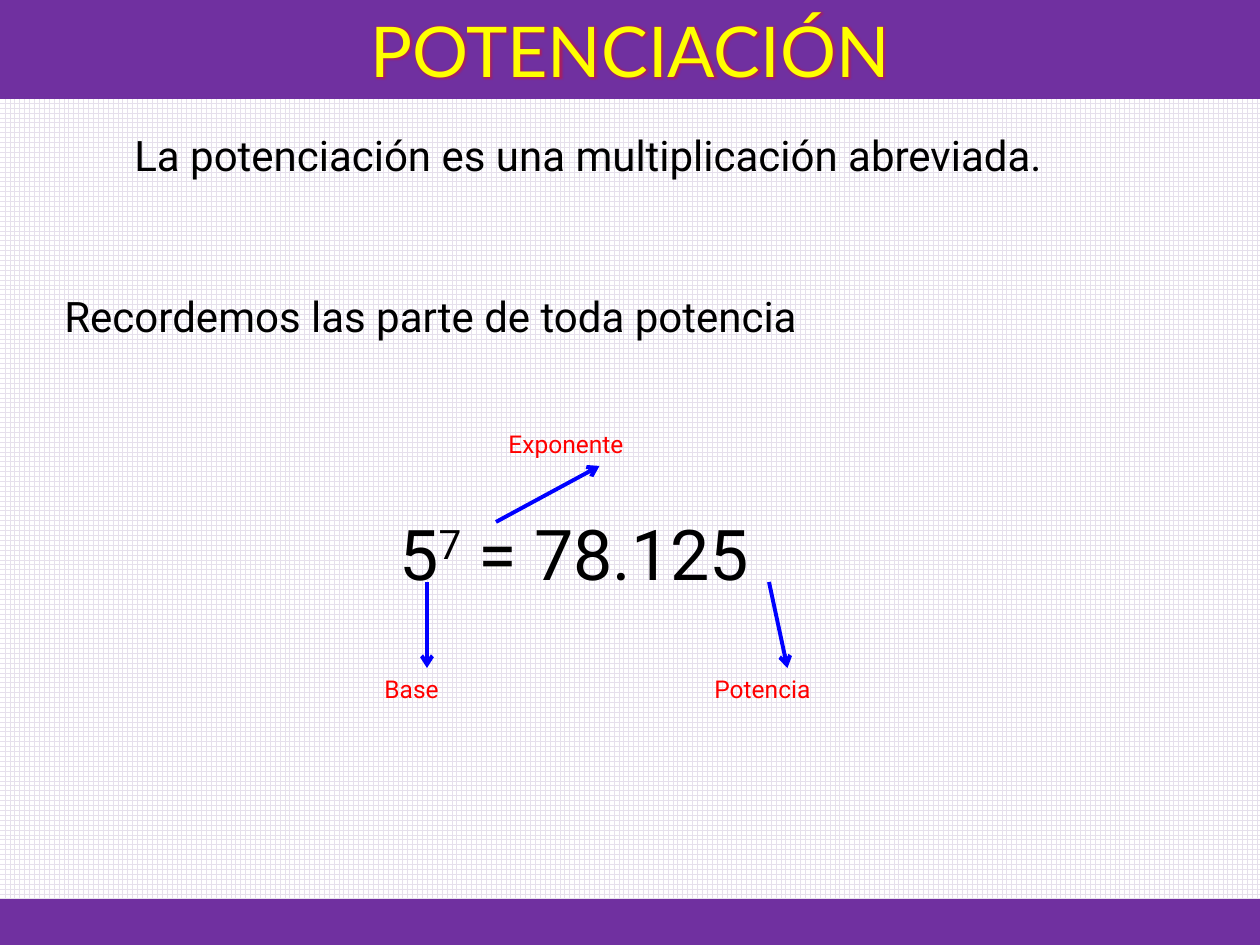
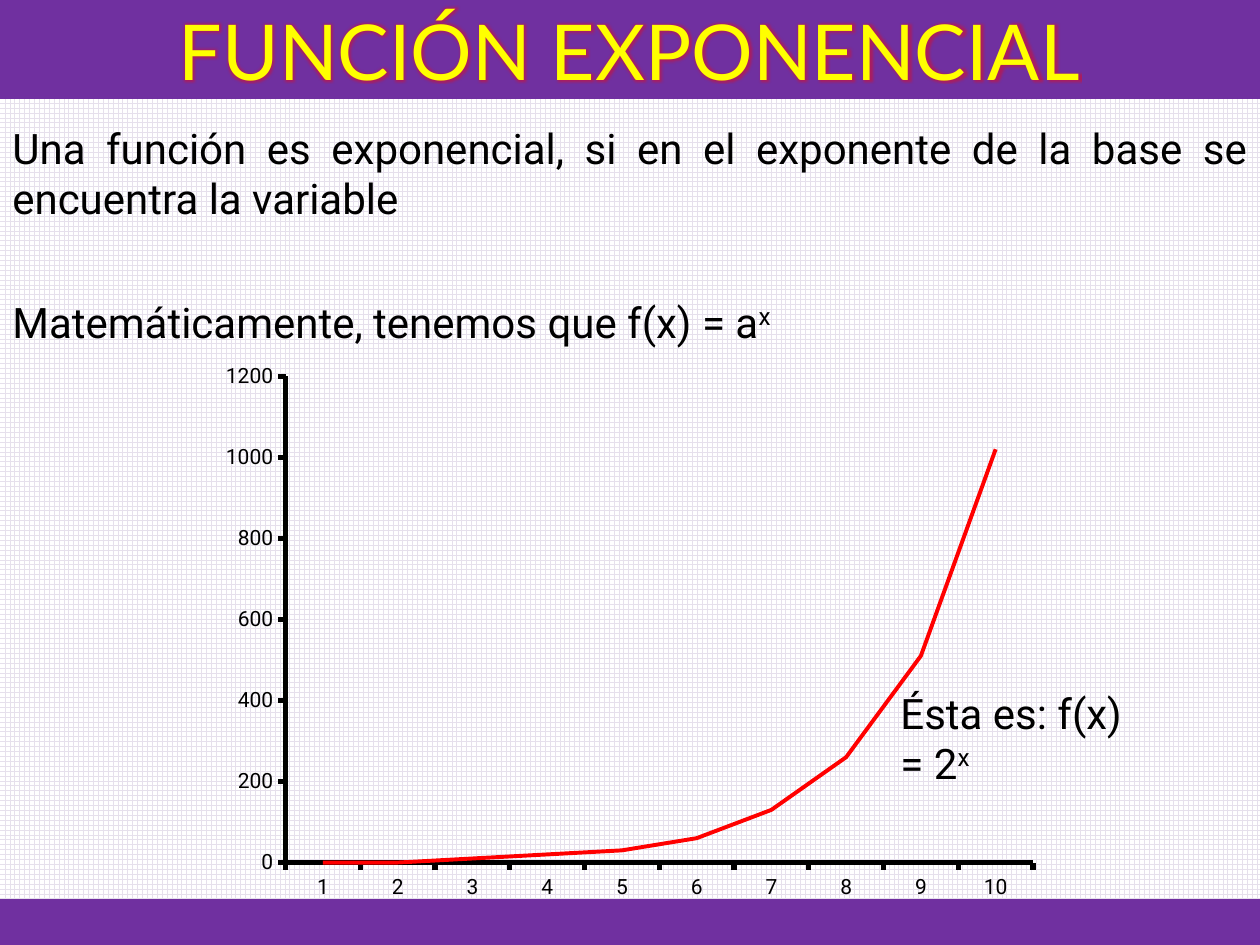
from dataclasses import dataclass
from lxml.etree import SubElement
from pptx import Presentation
from pptx.chart.data import CategoryChartData
from pptx.dml.color import RGBColor
from pptx.enum.chart import XL_CHART_TYPE, XL_TICK_MARK
from pptx.enum.dml import MSO_PATTERN
from pptx.enum.shapes import MSO_CONNECTOR, MSO_SHAPE
from pptx.enum.text import MSO_ANCHOR, MSO_AUTO_SIZE, PP_ALIGN
from pptx.oxml import parse_xml
from pptx.oxml.ns import nsdecls, qn
from pptx.util import Emu, Pt

SCALE = 914400 / 126
WIDE, HIGH = 1260, 945


@dataclass(frozen=True)
class Theme:
    band: str = "7030A0"
    title: str = "FFFF00"
    edge: str = "F79646"
    glow: str = "FF0000"
    grid: str = "E6E0EC"
    paper: str = "FFFFFF"
    ink: str = "000000"
    label: str = "FF0000"
    arrow: str = "0000FF"
    curve: str = "FF0000"
    head: str = "Lato"
    body: str = "Roboto"
    text: int = 24
    power: int = 40
    note: int = 14
    tick: int = 12
    line: float = 2.25
    axis: int = 3


T = Theme()


def px(n):
    return Emu(round(n * SCALE))


def place(*box):
    return [px(n) for n in box]


def tint(code):
    return RGBColor.from_string(code)


def style(font, size, color=T.ink, face=T.body):
    font.size = Pt(size)
    font.name = face
    font.color.rgb = tint(color)


def write(slide, box, runs, size=T.text, color=T.ink, align=PP_ALIGN.LEFT):
    shape = slide.shapes.add_textbox(*place(*box))
    frame = shape.text_frame
    frame.word_wrap = True
    frame.auto_size = MSO_AUTO_SIZE.SHAPE_TO_FIT_TEXT
    para = frame.paragraphs[0]
    para.alignment = align
    for text, raised in runs:
        run = para.add_run()
        run.text = text
        style(run.font, size, color)
        if raised:
            run.font._element.set("baseline", "30000")
    return shape


def add_band(slide, box):
    band = slide.shapes.add_shape(MSO_SHAPE.RECTANGLE, *place(*box))
    band.shadow.inherit = False
    band.fill.solid()
    band.fill.fore_color.rgb = tint(T.band)
    band.line.fill.background()
    return band


def add_title(slide, box, text, size):
    frame = add_band(slide, box).text_frame
    frame.word_wrap = True
    frame.vertical_anchor = MSO_ANCHOR.MIDDLE
    para = frame.paragraphs[0]
    para.alignment = PP_ALIGN.CENTER
    run = para.add_run()
    run.text = text
    style(run.font, size, T.title, T.head)
    props = run.font._element
    props.insert(0, parse_xml(
        f'<a:ln {nsdecls("a")} w="9525"><a:solidFill>'
        f'<a:srgbClr val="{T.edge}"/></a:solidFill></a:ln>'))
    props.insert(2, parse_xml(
        f'<a:effectLst {nsdecls("a")}><a:glow rad="50800">'
        f'<a:srgbClr val="{T.glow}"><a:alpha val="40000"/></a:srgbClr>'
        '</a:glow></a:effectLst>'))


def add_page(deck, title, size):
    slide = deck.slides.add_slide(deck.slide_layouts[6])
    fill = slide.background.fill
    fill.patterned()
    fill.pattern = MSO_PATTERN.LARGE_GRID
    fill.fore_color.rgb = tint(T.grid)
    fill.back_color.rgb = tint(T.paper)
    add_title(slide, (0, 0, WIDE, 99), title, size)
    add_band(slide, (0, 899, WIDE, HIGH - 899))
    return slide


def add_arrow(slide, x, y, label, side):
    link = slide.shapes.add_connector(MSO_CONNECTOR.STRAIGHT, *place(x, y, x, y))
    link.end_connect(label, side)
    link.line.color.rgb = tint(T.arrow)
    link.line.width = Pt(T.line)
    SubElement(link.line._get_or_add_ln(), qn("a:tailEnd"), type="arrow")
    SubElement(link._element.spPr, qn("a:effectLst"))


def add_power(slide, box):
    x, y, w, h = box
    write(slide, (x + 15, y + 81, w - 18, 97),
          [("5", False), ("7", True), (" = 78.125", False)], T.power)
    tall = 43
    low = h - tall
    parts = [
        ("Base", 0, low, 110, (55, 159), 0),
        ("Exponente", 124, 0, 207, (124, 99), 2),
        ("Potencia", 330, low, 171, (397, 159), 0),
    ]
    for name, left, top, wide, start, side in parts:
        label = write(slide, (x + left, y + top, wide, tall),
                      [(name, False)], T.note, T.label)
        add_arrow(slide, x + start[0], y + start[1], label, side)


def set_axis(axis):
    axis.has_major_gridlines = False
    axis.major_tick_mark = XL_TICK_MARK.OUTSIDE
    axis.minor_tick_mark = XL_TICK_MARK.NONE
    axis.format.line.color.rgb = tint(T.ink)
    axis.format.line.width = Pt(T.axis)
    style(axis.tick_labels.font, T.tick)


def set_plot(chart, **parts):
    area = chart.element.find(qn("c:chart")).find(qn("c:plotArea"))
    for old in area.findall(qn("c:layout")):
        area.remove(old)
    layout = parse_xml(f'<c:layout {nsdecls("c")}/>')
    area.insert(0, layout)
    manual = SubElement(layout, qn("c:manualLayout"))
    SubElement(manual, qn("c:layoutTarget"), val="inner")
    for key in "xy":
        SubElement(manual, qn(f"c:{key}Mode"), val="edge")
    for key, value in parts.items():
        SubElement(manual, qn(f"c:{key}"), val=str(value))


def add_curve(slide, box):
    steps = range(1, 11)
    data = CategoryChartData()
    data.categories = [str(n) for n in steps]
    data.add_series("Series 1", [round(2 ** n, -1) for n in steps])
    chart = slide.shapes.add_chart(XL_CHART_TYPE.LINE, *place(*box), data).chart
    chart.has_legend = False
    chart.has_title = False
    style(chart.font, T.tick)
    set_axis(chart.category_axis)
    set_axis(chart.value_axis)
    chart.value_axis.minimum_scale = 0
    chart.value_axis.maximum_scale = 1200
    chart.value_axis.major_unit = 200
    plot = chart.plots[0]
    plot.vary_by_categories = False
    curve = plot.series[0]
    curve.smooth = False
    curve.format.line.color.rgb = tint(T.curve)
    curve.format.line.width = Pt(T.line)
    set_plot(chart, x=0.09, y=0.04, w=0.89, h=0.87)


def power_page(deck):
    slide = add_page(deck, "POTENCIACIÓN", 40)
    write(slide, (122, 123, 1014, 115),
          [("La potenciación es una multiplicación abreviada.", False)],
          align=PP_ALIGN.JUSTIFY)
    write(slide, (52, 284, 1155, 63),
          [("Recordemos las parte de toda potencia", False)])
    add_power(slide, (372, 423, 504, 288))


def curve_page(deck):
    slide = add_page(deck, "FUNCIÓN EXPONENCIAL", 44)
    write(slide, (0, 116, WIDE, 165),
          [("Una función es exponencial, si en el exponente de la base "
            "se encuentra la variable", False)], align=PP_ALIGN.JUSTIFY)
    write(slide, (0, 290, 1186, 63),
          [("Matemáticamente, tenemos que f(x) = a", False), ("x", True)])
    add_curve(slide, (210, 354, 840, 559))
    write(slide, (888, 681, 258, 115),
          [("Ésta es: f(x) = 2", False), ("x", True)])


def main():
    deck = Presentation()
    deck.slide_width, deck.slide_height = place(WIDE, HIGH)
    power_page(deck)
    curve_page(deck)
    deck.save("out.pptx")


if __name__ == "__main__":
    main()
